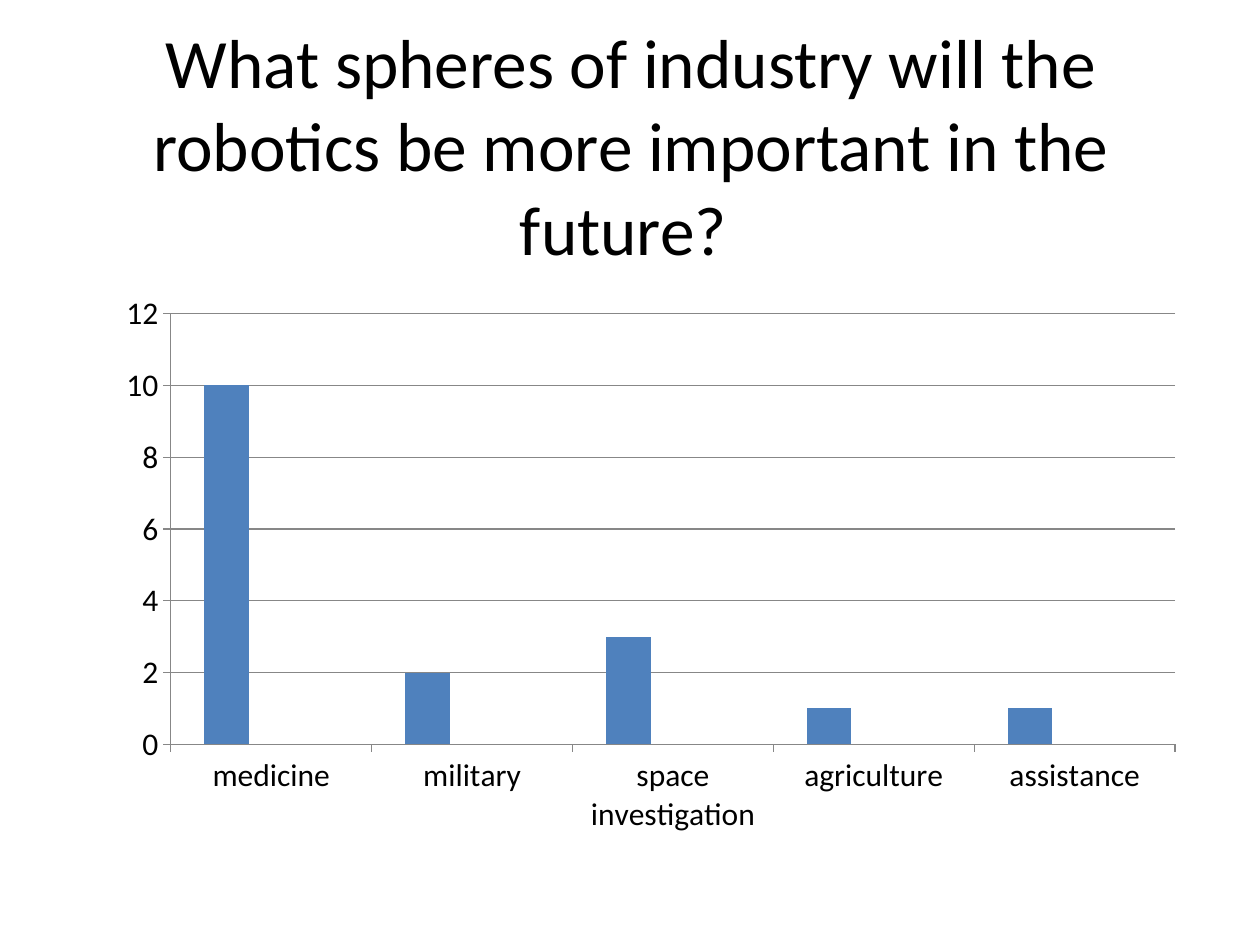
from dataclasses import dataclass

from pptx import Presentation
from pptx.chart.data import CategoryChartData
from pptx.dml.color import RGBColor
from pptx.enum.chart import XL_CHART_TYPE, XL_TICK_MARK
from pptx.enum.text import MSO_ANCHOR, MSO_AUTO_SIZE, PP_ALIGN
from pptx.util import Inches, Pt

FONT = "Calibri"
BLACK = RGBColor(0x00, 0x00, 0x00)
GRAY = RGBColor(0x87, 0x87, 0x87)
BLUE = RGBColor(0x4F, 0x81, 0xBD)
RED = RGBColor(0xC0, 0x50, 0x4D)
GREEN = RGBColor(0x9B, 0xBB, 0x59)

SPHERES = ["medicine", "military", "space investigation", "agriculture", "assistance"]
NO_VOTES = [None] * len(SPHERES)


@dataclass
class Area:
    left: float
    top: float
    width: float
    height: float

    def lengths(self):
        return [Inches(side) for side in (self.left, self.top, self.width, self.height)]


@dataclass
class Series:
    name: str
    values: list
    color: RGBColor


TITLE_AREA = Area(0.51, 0.52, 9, 1.25)
CHART_AREA = Area(0.83, 2.25, 8.67, 4.45)
SERIES = [
    Series("Series 1", [10, 2, 3, 1, 1], BLUE),
    Series("Series 2", NO_VOTES, RED),
    Series("Series 3", NO_VOTES, GREEN),
]


def format_font(font, *, size: float, color: RGBColor = BLACK) -> None:
    font.name = FONT
    font.size = Pt(size)
    font.color.rgb = color


def write_text(box, text: str, *, size: float, align: PP_ALIGN) -> None:
    frame = box.text_frame
    frame.word_wrap = True
    frame.auto_size = MSO_AUTO_SIZE.NONE
    frame.vertical_anchor = MSO_ANCHOR.MIDDLE
    para = frame.paragraphs[0]
    para.alignment = align
    span = para.add_run()
    span.text = text
    format_font(span.font, size=size)


def add_column_chart(page, area: Area, series_list: list[Series]) -> None:
    data = CategoryChartData()
    data.categories = SPHERES
    for series in series_list:
        data.add_series(series.name, series.values)
    chart = page.shapes.add_chart(
        XL_CHART_TYPE.COLUMN_CLUSTERED, *area.lengths(), data
    ).chart
    chart.has_legend = False
    chart.has_title = False
    format_font(chart.font, size=18)

    # Columns
    plot = chart.plots[0]
    plot.gap_width = 150
    plot.overlap = 0
    plot.vary_by_categories = False
    for drawn, series in zip(plot.series, series_list):
        drawn.format.fill.solid()
        drawn.format.fill.fore_color.rgb = series.color

    # Axes and gridlines
    values = chart.value_axis
    values.minimum_scale, values.maximum_scale, values.major_unit = 0, 12, 2
    values.has_major_gridlines = True
    for axis in (chart.category_axis, values):
        axis.major_tick_mark = XL_TICK_MARK.OUTSIDE
        axis.minor_tick_mark = XL_TICK_MARK.NONE
    for item in (chart.category_axis, values, values.major_gridlines):
        item.format.line.color.rgb = GRAY
        item.format.line.width = Pt(0.75)


def main() -> None:
    deck = Presentation()
    deck.slide_width, deck.slide_height = Inches(10), Inches(7.5)
    page = deck.slides.add_slide(deck.slide_layouts[5])

    # Title
    title = page.shapes.title
    title.left, title.top, title.width, title.height = TITLE_AREA.lengths()
    write_text(
        title,
        "What spheres of industry will the robotics be more important in the future? ",
        size=39.6,
        align=PP_ALIGN.CENTER,
    )

    # Votes by sphere
    add_column_chart(page, CHART_AREA, SERIES)
    deck.save("out.pptx")


if __name__ == "__main__":
    main()
